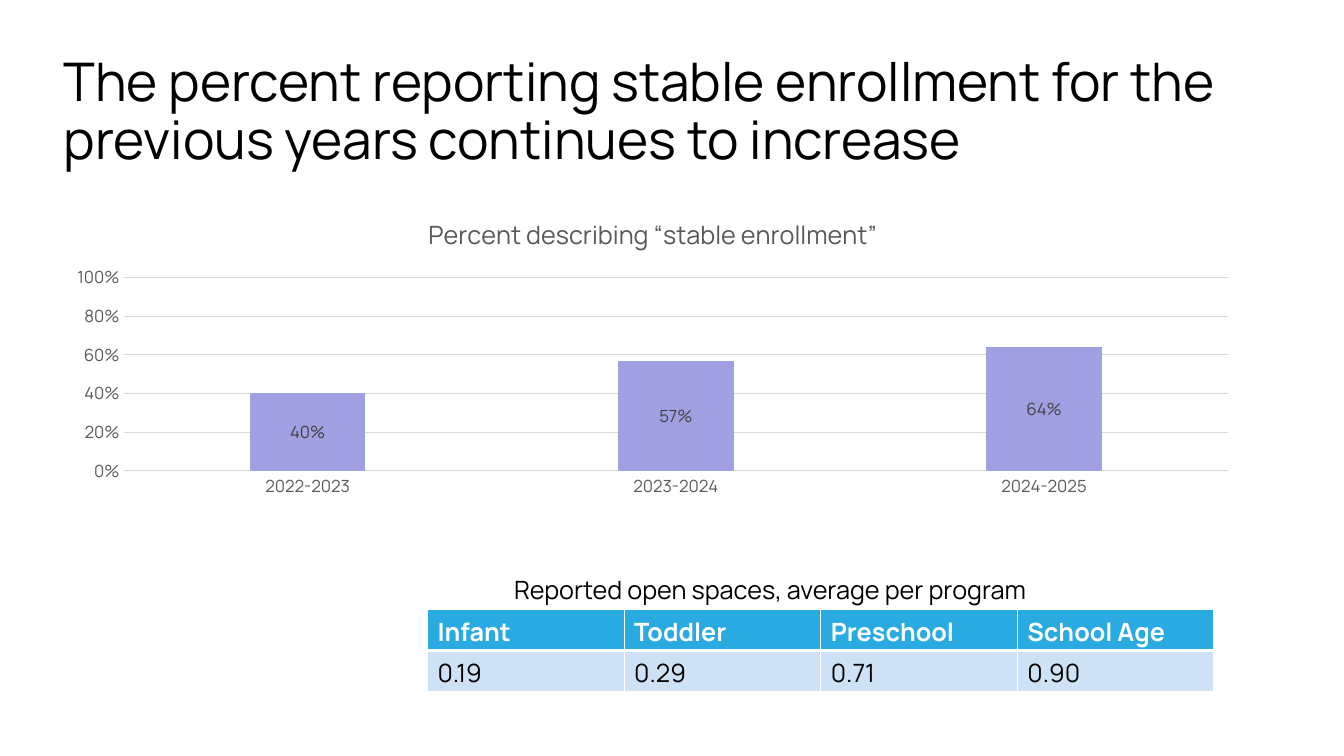
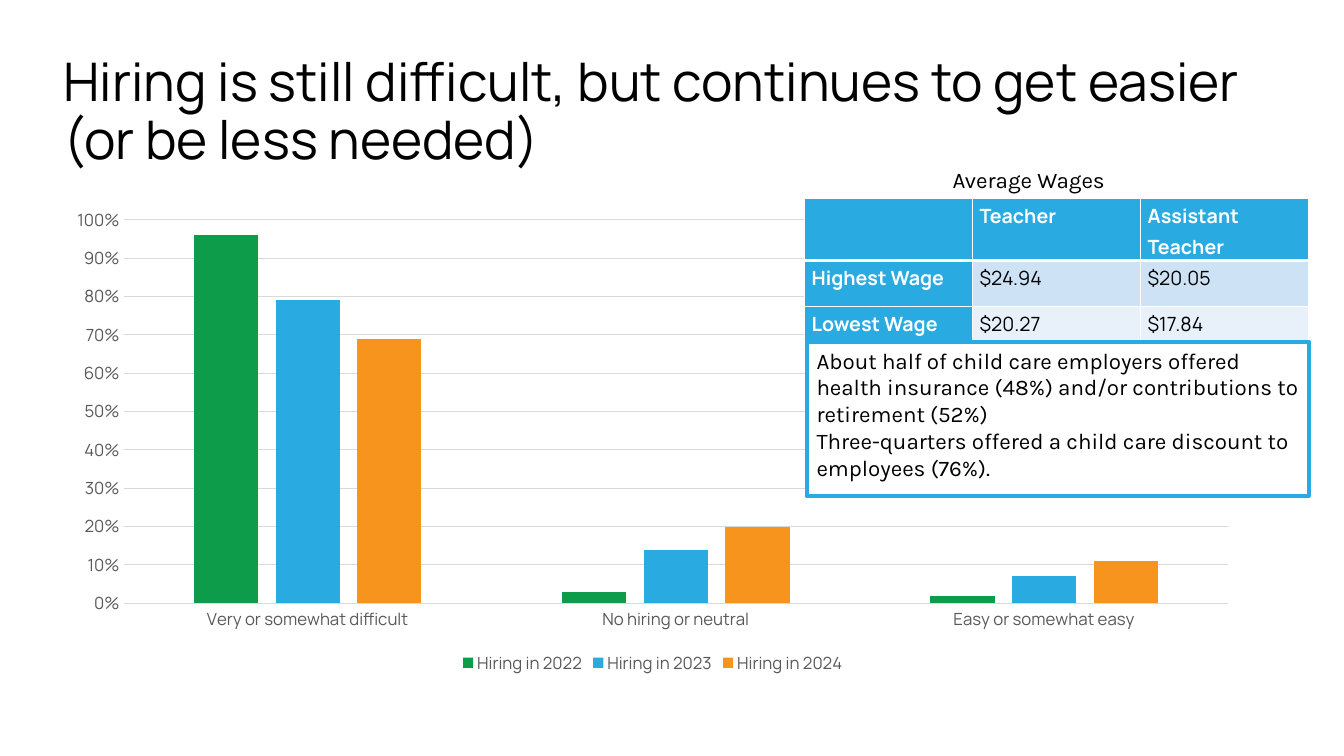
"""Build two slides on child care enrollment and hiring."""
from dataclasses import dataclass, field
from typing import Any

from lxml import etree
from pptx import Presentation
from pptx import util as u
from pptx.chart import data as cd
from pptx.dml import color as dml
from pptx.enum import chart as ch
from pptx.enum import shapes as sh
from pptx.enum import text as tx
from pptx.oxml import ns

HUES = {
    "ink": "000000", "white": "FFFFFF", "gray": "595959", "dark": "404040",
    "grid": "D9D9D9", "blue": "29ABE2", "pale": "CDE2F4", "faint": "E8F1FA",
    "lilac": "9EA0E1", "green": "0D9C4A", "gold": "F7941D",
}
SANS, ALT = "Manrope", "Karla"
Box = tuple[float, float, float, float]
HEAD: Box = (0.53, 0.4, 11.89, 1.45)


@dataclass
class Bars:
    box: Box
    cats: list[str]
    sets: list[tuple[str, str, list[float]]]
    step: float
    title: str = ""


@dataclass
class Grid:
    box: Box
    rows: list[list[str]]
    size: int
    side: bool = False
    cell: dict[str, Any] = field(default_factory=dict)
    para: dict[str, Any] = field(default_factory=dict)


@dataclass
class Note:
    box: Box
    text: str
    size: int
    face: str


def rgb(hue: str) -> dml.RGBColor:
    return dml.RGBColor.from_string(HUES[hue])


def put(obj: Any, fmt: dict[str, Any]) -> None:
    for key, val in fmt.items():
        setattr(obj, key, val)


def ink(font: Any, size: float, hue: str = "ink", face: str = SANS, bold: bool = False) -> None:
    put(font, {"size": u.Pt(size), "name": face, "bold": bold})
    font.color.rgb = rgb(hue)


def dims(box: Box) -> list[int]:
    return [u.Inches(n) for n in box]


def fill(obj: Any, hue: str) -> None:
    obj.fill.solid()
    obj.fill.fore_color.rgb = rgb(hue)


def edge(line: Any, hue: str, width: float) -> None:
    line.color.rgb = rgb(hue)
    line.width = u.Pt(width)


def start(prs: Any, title: str) -> Any:
    slide = prs.slides.add_slide(prs.slide_layouts[5])
    head = slide.shapes.title
    put(head, dict(zip(("left", "top", "width", "height"), dims(HEAD))))
    frame = head.text_frame
    frame.text = title
    put(frame, {"word_wrap": True, "auto_size": tx.MSO_AUTO_SIZE.NONE,
                "vertical_anchor": tx.MSO_ANCHOR.MIDDLE})
    para = frame.paragraphs[0]
    put(para, {"alignment": tx.PP_ALIGN.LEFT, "line_spacing": 0.9})
    ink(para.font, 38)
    return slide


def plot(slide: Any, bars: Bars) -> None:
    data = cd.CategoryChartData(number_format="0%")
    data.categories = bars.cats
    for name, _, vals in bars.sets:
        data.add_series(name, vals)
    kind = ch.XL_CHART_TYPE.COLUMN_CLUSTERED
    chart = slide.shapes.add_chart(kind, *dims(bars.box), data).chart
    ink(chart.font, 10)
    chart.has_title = bool(bars.title)
    if bars.title:
        chart.chart_title.include_in_layout = False
        frame = chart.chart_title.text_frame
        frame.text = bars.title
        ink(frame.paragraphs[0].runs[0].font, 18, "gray")
    chart.has_legend = len(bars.sets) > 1
    if chart.has_legend:
        put(chart.legend, {"position": ch.XL_LEGEND_POSITION.BOTTOM, "include_in_layout": False})
        ink(chart.legend.font, 12, "gray")
    cat, val = chart.category_axis, chart.value_axis
    for axis in (cat, val):
        put(axis, {"major_tick_mark": ch.XL_TICK_MARK.NONE, "minor_tick_mark": ch.XL_TICK_MARK.NONE})
        ink(axis.tick_labels.font, 12, "gray")
    put(val, {"minimum_scale": 0, "maximum_scale": 1, "major_unit": bars.step,
              "has_major_gridlines": True})
    put(val.tick_labels, {"number_format": "0%", "number_format_is_linked": False})
    val.format.line.fill.background()
    for line in (cat.format.line, val.major_gridlines.format.line):
        edge(line, "grid", 0.75)
    area = chart.plots[0]
    put(area, {"gap_width": 219, "overlap": -27, "vary_by_categories": False})
    for item, (_, hue, _) in zip(area.series, bars.sets):
        fill(item.format, hue)
    if not chart.has_legend:
        tags = area.series[0].data_labels
        put(tags, {"show_value": True, "position": ch.XL_LABEL_POSITION.CENTER,
                   "number_format": "0%", "number_format_is_linked": False})
        ink(tags.font, 12, "dark")


def rule(cell: Any, row: int) -> None:
    wide = {"L": 1, "R": 1, "T": 3 if row == 1 else 1, "B": 3 if row == 0 else 1}
    props = cell._tc.get_or_add_tcPr()
    for side, width in wide.items():
        line = etree.SubElement(props, ns.qn(f"a:ln{side}"), w=str(u.Pt(width)))
        paint = etree.SubElement(line, ns.qn("a:solidFill"))
        etree.SubElement(paint, ns.qn("a:srgbClr"), val=HUES["white"])


def tabulate(slide: Any, grid: Grid) -> None:
    rows, cols = len(grid.rows), len(grid.rows[0])
    table = slide.shapes.add_table(rows, cols, *dims(grid.box)).table
    for r, texts in enumerate(grid.rows):
        for c, text in enumerate(texts):
            cell = table.cell(r, c)
            head = r == 0 or (grid.side and c == 0)
            rule(cell, r)
            fill(cell, "blue" if head else ("pale", "faint")[(r - 1) % 2])
            put(cell, grid.cell)
            cell.text = text
            para = cell.text_frame.paragraphs[0]
            put(para, grid.para)
            ink(para.font, grid.size, "white" if head else "ink", bold=head)


def label(slide: Any, note: Note) -> None:
    frame = slide.shapes.add_textbox(*dims(note.box)).text_frame
    frame.word_wrap = True
    frame.text = note.text
    ink(frame.paragraphs[0].font, note.size, face=note.face)


def panel(slide: Any, box: Box, lines: list[str]) -> None:
    shape = slide.shapes.add_shape(sh.MSO_SHAPE.RECTANGLE, *dims(box))
    shape.shadow.inherit = False
    fill(shape, "white")
    edge(shape.line, "blue", 3)
    frame = shape.text_frame
    frame.text = "\n".join(lines)
    put(frame, {"word_wrap": True, "vertical_anchor": tx.MSO_ANCHOR.TOP})
    for para in frame.paragraphs:
        para.alignment = tx.PP_ALIGN.LEFT
        ink(para.font, 16, face=ALT)


def enroll(prs: Any) -> None:
    slide = start(prs, "The percent reporting stable enrollment for the previous years "
                       "continues to increase")
    plot(slide, Bars((0.53, 1.97, 11.89, 3.03), ["2022-2023", "2023-2024", "2024-2025"],
                     [("Series 1", "lilac", [0.4, 0.57, 0.64])], 0.2,
                     "Percent describing “stable enrollment”"))
    label(slide, Note((5, 5.65, 5.9, 0.4), "Reported open spaces, average per program", 18, SANS))
    tabulate(slide, Grid((4.24, 6.05, 7.8, 0.81),
                         [["Infant", "Toddler", "Preschool", "School Age"],
                          ["0.19", "0.29", "0.71", "0.90"]], 18))


def hire(prs: Any) -> None:
    slide = start(prs, "Hiring is still difficult, but continues to get easier "
                       "(or be less needed)")
    plot(slide, Bars((0.53, 1.97, 11.89, 4.76),
                     ["Very or somewhat difficult", "No hiring or neutral", "Easy or somewhat easy"],
                     [("Hiring in 2022", "green", [0.96, 0.03, 0.02]),
                      ("Hiring in 2023", "blue", [0.79, 0.14, 0.07]),
                      ("Hiring in 2024", "gold", [0.69, 0.2, 0.11])], 0.1))
    pad = u.Inches(0.07)
    tabulate(slide, Grid((7.98, 1.97, 5, 1.38),
                         [["", "Teacher", "Assistant Teacher"],
                          ["Highest Wage", "$24.94", "$20.05"],
                          ["Lowest Wage", "$20.27", "$17.84"]], 14, True,
                         {"margin_left": pad, "margin_right": pad, "margin_top": 0, "margin_bottom": 0},
                         {"line_spacing": 1.15, "space_after": u.Pt(8)}))
    label(slide, Note((9.35, 1.6, 1.78, 0.37), "Average Wages", 16, ALT))
    panel(slide, (8, 3.39, 4.98, 1.53),
          ["About half of child care employers offered health insurance (48%) "
           "and/or contributions to retirement (52%)",
           "Three-quarters offered a child care discount to employees (76%)."])


def main() -> None:
    prs = Presentation()
    put(prs, {"slide_width": u.Inches(13.33), "slide_height": u.Inches(7.5)})
    enroll(prs)
    hire(prs)
    prs.save("out.pptx")


if __name__ == "__main__":
    main()
